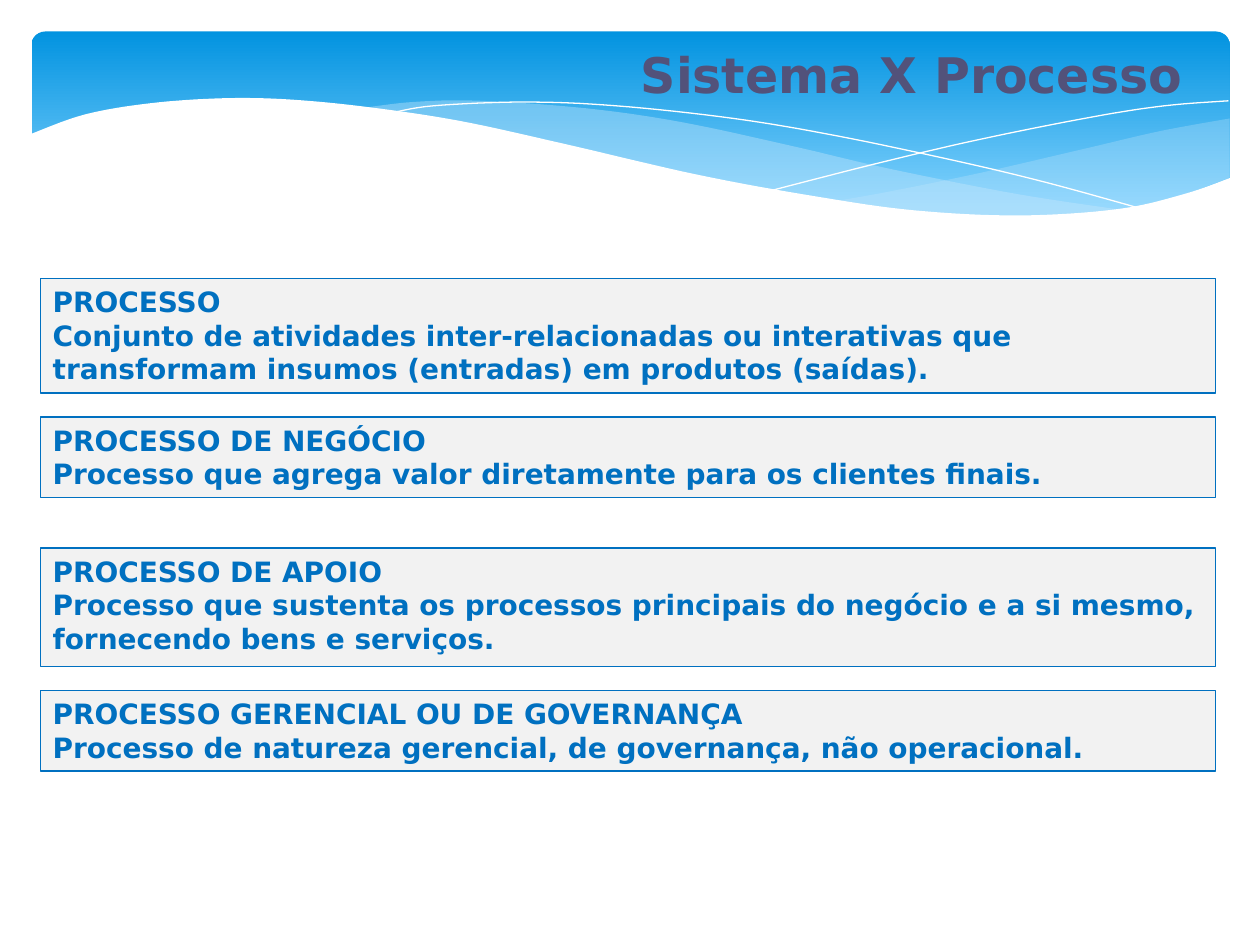
from dataclasses import dataclass

from lxml import etree
from pptx import Presentation
from pptx.dml.color import RGBColor
from pptx.enum.shapes import MSO_SHAPE
from pptx.enum.text import MSO_ANCHOR, PP_ALIGN
from pptx.oxml.ns import qn
from pptx.util import Inches, Pt

RECT, ROUNDED = MSO_SHAPE.RECTANGLE, MSO_SHAPE.ROUNDED_RECTANGLE
TOP, MIDDLE = MSO_ANCHOR.TOP, MSO_ANCHOR.MIDDLE
LEFT, RIGHT = PP_ALIGN.LEFT, PP_ALIGN.RIGHT


@dataclass(frozen=True)
class Theme:
    font: str = "DejaVu Sans"
    title_size: int = 28
    body_size: int = 16
    title: str = "52527A"
    accent: str = "0070C0"
    panel: str = "F2F2F2"
    white: str = "FFFFFF"
    mist: str = "C6E7FC"
    sky_top: str = "0293E0"
    sky_bottom: str = "83D3FE"


THEME = Theme()
WIDTH, HEIGHT = 10, 7.5
CARD_LEFT, CARD_WIDTH = 0.32, 9.33

TITLE = "Sistema X Processo"
# Top, height, heading, definition
CARDS = [
    (2.21, 0.91, "PROCESSO",
     "Conjunto de atividades inter-relacionadas ou interativas que "
     "transformam insumos (entradas) em produtos (saídas)."),
    (3.31, 0.64, "PROCESSO DE NEGÓCIO",
     "Processo que agrega valor diretamente para os clientes finais."),
    (4.35, 0.94, "PROCESSO DE APOIO",
     "Processo que sustenta os processos principais do negócio e a si mesmo, "
     "fornecendo bens e serviços."),
    (5.48, 0.64, "PROCESSO GERENCIAL OU DE GOVERNANÇA",
     "Processo de natureza gerencial, de governança, não operacional."),
]

# Each wave is a chain of smooth curves that meet at corners
RIGHT_SWELL = [
    [(9.76, 0.94), (9.21, 1.04), (8.61, 1.18), (7.79, 1.37), (7.06, 1.52), (6.61, 1.6)],
    [(6.61, 1.6), (7.19, 1.67), (7.69, 1.71), (8.24, 1.72), (8.81, 1.67),
     (9.28, 1.58), (9.76, 1.41)],
]
LONG_SWELL = [
    [(8.93, 1.67), (8.07, 1.54), (7.06, 1.34), (6.29, 1.16), (5.41, 0.97),
     (4.65, 0.86), (3.8, 0.8), (3.28, 0.81), (2.86, 0.86)],
    [(2.86, 0.86), (3.62, 0.97), (4.49, 1.16), (5.66, 1.43), (6.5, 1.58),
     (7.22, 1.68), (7.85, 1.72), (8.38, 1.72), (8.93, 1.67)],
]
FALLING_LINE = [
    [(3.09, 0.9), (3.44, 0.84), (4.16, 0.81), (4.89, 0.84), (5.82, 0.94),
     (6.65, 1.08), (7.6, 1.28), (8.31, 1.45), (9.07, 1.66)],
]
RISING_LINE = [
    [(6.13, 1.51), (6.95, 1.3), (7.76, 1.11), (8.66, 0.93), (9.24, 0.84), (9.75, 0.8)],
]
FOREGROUND = [
    [(9.77, 1.41), (9.4, 1.54), (8.87, 1.66), (8.09, 1.71), (7.26, 1.67),
     (6.48, 1.56), (5.55, 1.39), (4.47, 1.14), (3.65, 0.96), (2.92, 0.85),
     (2.3, 0.79), (1.77, 0.78), (1.19, 0.82), (0.67, 0.91), (0.23, 1.07)],
    [(0.23, 2.24), (9.77, 2.24)],
]


def rgb(color):
    return RGBColor.from_string(color)


def smooth(knots, steps=8):
    """Sample a Catmull-Rom curve that passes through the knots."""
    padded = [knots[0], *knots, knots[-1]]
    points = [knots[0]]
    for quad in zip(padded, padded[1:], padded[2:], padded[3:]):
        for step in range(1, steps + 1):
            t = step / steps
            points.append(tuple(
                b + t * (c - a) / 2
                + t * t * (a - 2.5 * b + 2 * c - d / 2)
                + t ** 3 * (3 * b - a - 3 * c + d) / 2
                for a, b, c, d in zip(*quad)))
    return points


def add_wave(slide, curves, fill=None, opacity=100):
    """Draw a filled wave, or a white hairline when no fill is given."""
    start, *rest = [(Inches(x), Inches(y)) for curve in curves for x, y in smooth(curve)]
    builder = slide.shapes.build_freeform(*start)
    builder.add_line_segments(rest, close=fill is not None)
    wave = builder.convert_to_shape()
    wave.shadow.inherit = False
    if fill is None:
        wave.fill.background()
        wave.line.color.rgb = rgb(THEME.white)
        wave.line.width = 0
        return
    wave.line.fill.background()
    wave.fill.solid()
    wave.fill.fore_color.rgb = rgb(fill)
    if opacity < 100:
        color = wave.fill._xPr.find(".//" + qn("a:srgbClr"))
        etree.SubElement(color, qn("a:alpha"), val=str(opacity * 1000))


def add_banner(slide):
    sky = slide.shapes.add_shape(
        ROUNDED, Inches(0.25), Inches(0.25), Inches(WIDTH - 0.49), Inches(1.56))
    sky.adjustments[0] = 0.07
    sky.shadow.inherit = False
    sky.line.fill.background()
    sky.fill.gradient()
    sky.fill.gradient_angle = 270
    stops = zip(sky.fill.gradient_stops, (0, 0.9), (THEME.sky_top, THEME.sky_bottom))
    for stop, position, color in stops:
        stop.position = position
        stop.color.rgb = rgb(color)
    add_wave(slide, RIGHT_SWELL, THEME.mist, 29)
    add_wave(slide, LONG_SWELL, THEME.mist, 40)
    add_wave(slide, FALLING_LINE)
    add_wave(slide, RISING_LINE)
    add_wave(slide, FOREGROUND, THEME.white)


def write(shape, text, size, color, align, anchor):
    frame = shape.text_frame
    frame.text = text
    frame.word_wrap = True
    frame.vertical_anchor = anchor
    for paragraph in frame.paragraphs:
        paragraph.alignment = align
        for run in paragraph.runs:
            run.font.name = THEME.font
            run.font.size = Pt(size)
            run.font.bold = True
            run.font.color.rgb = rgb(color)


def place_title(slide):
    title = slide.shapes.title
    title.left, title.top = Inches(2.24), Inches(0.25)
    title.width, title.height = Inches(7.24), Inches(0.67)
    write(title, TITLE, THEME.title_size, THEME.title, RIGHT, MIDDLE)
    slide.shapes._spTree.append(title._element)  # bring in front of the banner


def add_card(slide, top, height, heading, definition):
    card = slide.shapes.add_shape(
        RECT, Inches(CARD_LEFT), Inches(top), Inches(CARD_WIDTH), Inches(height))
    card.shadow.inherit = False
    card.fill.solid()
    card.fill.fore_color.rgb = rgb(THEME.panel)
    card.line.color.rgb = rgb(THEME.accent)
    card.line.width = Pt(0.75)
    write(card, f"{heading}\n{definition}", THEME.body_size, THEME.accent, LEFT, TOP)


def main():
    deck = Presentation()
    deck.slide_width, deck.slide_height = Inches(WIDTH), Inches(HEIGHT)
    slide = deck.slides.add_slide(deck.slide_layouts.get_by_name("Title Only"))
    add_banner(slide)
    place_title(slide)
    for card in CARDS:
        add_card(slide, *card)
    deck.save("out.pptx")


if __name__ == "__main__":
    main()
